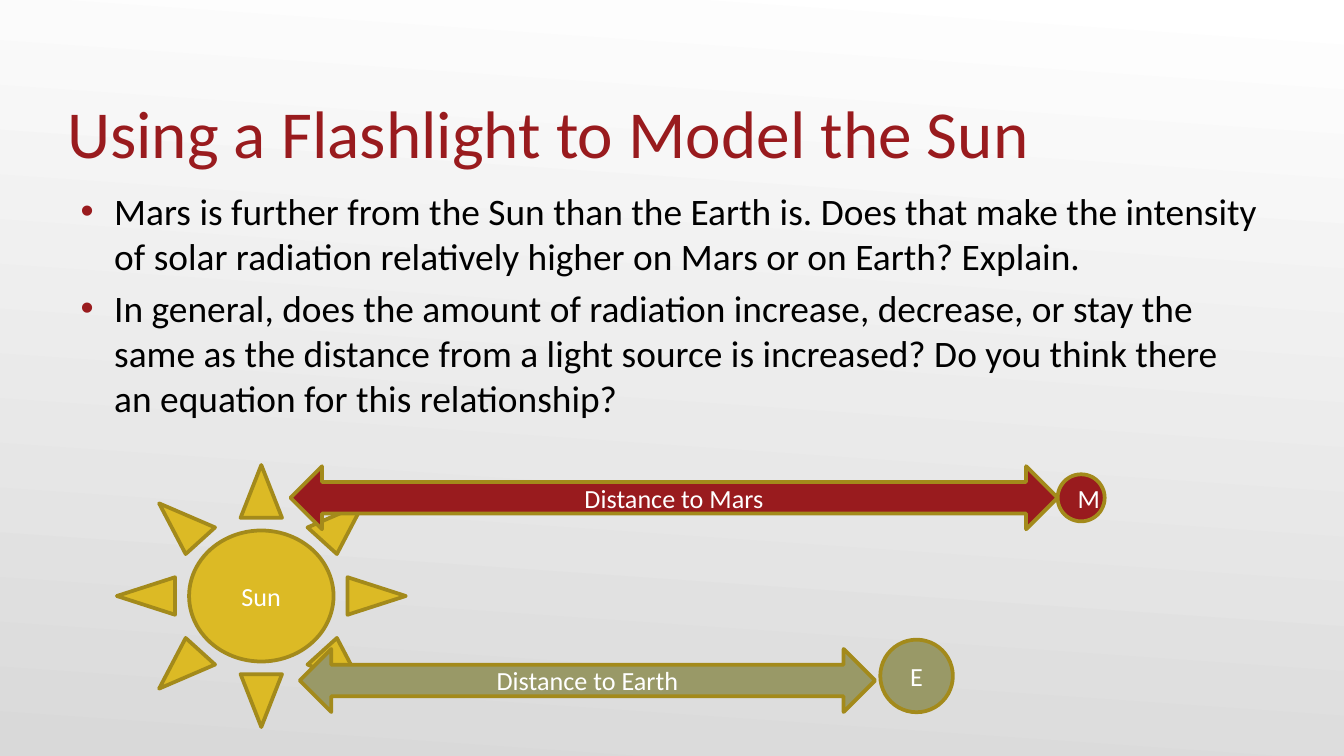
from dataclasses import dataclass

from lxml.etree import SubElement
from pptx import Presentation
from pptx.dml.color import RGBColor
from pptx.enum.shapes import MSO_SHAPE as Preset
from pptx.enum.text import MSO_ANCHOR as Anchor, MSO_AUTO_SIZE as AutoSize, PP_ALIGN as Align
from pptx.oxml.ns import qn
from pptx.util import Pt


@dataclass(frozen=True)
class Theme:
    font: str = "Calibri"
    red: str = "991B1E"
    gold: str = "DCBA25"
    olive: str = "999967"
    outline: str = "A38A1B"
    ink: str = "000000"
    white: str = "FFFFFF"
    grey: str = "D9D9D9"
    title_size: int = 36
    body_size: int = 20
    label_size: int = 14


THEME = Theme()
TITLE = "Using a Flashlight to Model the Sun"
QUESTIONS = [
    "Mars is further from the Sun than the Earth is. Does that make the intensity "
    "of solar radiation relatively higher on Mars or on Earth? Explain.",
    "In general, does the amount of radiation increase, decrease, or stay the same as "
    "the distance from a light source is increased? Do you think there an equation "
    "for this relationship?",
]


def rgb(color):
    return RGBColor.from_string(color)


def set_all(target, values):
    for name, value in values.items():
        setattr(target, name, value)


def set_box(shape, box):
    set_all(shape, dict(zip(("left", "top", "width", "height"), map(Pt, box))))


def set_font(paragraph, size, color):
    set_all(paragraph.font, {"name": THEME.font, "size": Pt(size)})
    paragraph.font.color.rgb = rgb(color)


def paint_background(slide):
    fill = slide.background.fill
    fill.gradient()
    fill.gradient_angle = 266  # counter-clockwise
    for stop, position, color in zip(fill.gradient_stops, (0, 1), (THEME.white, THEME.grey)):
        stop.position = position
        stop.color.rgb = rgb(color)


def place_title(title, box):
    set_box(title, box)
    frame = title.text_frame
    frame.text = TITLE
    set_all(frame, {
        "vertical_anchor": Anchor.BOTTOM, "auto_size": AutoSize.NONE, "word_wrap": True,
        "margin_left": 0, "margin_top": Pt(3.6), "margin_right": 0, "margin_bottom": 0,
    })
    heading = frame.paragraphs[0]
    heading.alignment = Align.LEFT
    set_font(heading, THEME.title_size, THEME.red)


def add_bullet(paragraph, indent):
    properties = paragraph._p.get_or_add_pPr()
    properties.set("marL", str(Pt(indent)))
    properties.set("indent", str(-Pt(indent)))
    color = SubElement(properties, qn("a:buClr"))
    SubElement(color, qn("a:srgbClr"), val=THEME.red)
    SubElement(properties, qn("a:buFont"), typeface="Arial")
    SubElement(properties, qn("a:buChar"), char="•")


def place_questions(body, box):
    set_box(body, box)
    frame = body.text_frame
    frame.text = "\n".join(QUESTIONS)
    set_all(frame, {"auto_size": AutoSize.NONE, "word_wrap": True, "vertical_anchor": Anchor.TOP})
    for index, question in enumerate(frame.paragraphs):
        question.space_before = Pt(4 if index else 0)
        add_bullet(question, 18)
        set_font(question, THEME.body_size, THEME.ink)


def add_labelled(slide, preset, box, color, label):
    shape = slide.shapes.add_shape(preset, *map(Pt, box))
    shape.shadow.inherit = False
    shape.fill.solid()
    shape.fill.fore_color.rgb = rgb(color)
    shape.line.color.rgb = rgb(THEME.outline)
    shape.line.width = Pt(2)
    frame = shape.text_frame
    frame.text = label
    set_all(frame, {"word_wrap": True, "vertical_anchor": Anchor.MIDDLE})
    frame.paragraphs[0].alignment = Align.CENTER
    set_font(frame.paragraphs[0], THEME.label_size, THEME.white)


def draw_distances(slide, box):
    """Draw the Sun at the left of the box, then the planets, then the arrows to them."""
    left, top, _, height = box
    planets = [  # name, colour, planet x, y, diameter, arrow x, y, length
        ("Earth", THEME.olive, 409, 93.6, 38.9, 98, 98.6, 308.2),
        ("Mars", THEME.red, 504, 5, 25.2, 93, 0.7, 411),
    ]
    add_labelled(slide, Preset.SUN, (left, top, 154.8, height), THEME.gold, "Sun")
    for name, color, x, y, diameter, *_ in planets:
        planet_box = (left + x, top + y, diameter, diameter)
        add_labelled(slide, Preset.OVAL, planet_box, color, name[0])
    for name, color, *_, x, y, length in reversed(planets):
        arrow_box = (left + x, top + y, length, 33.8)
        add_labelled(slide, Preset.LEFT_RIGHT_ARROW, arrow_box, color, f"Distance to {name}")


def main():
    deck = Presentation()
    set_all(deck, {"slide_width": Pt(720), "slide_height": Pt(405)})
    slide = deck.slides.add_slide(deck.slide_layouts[1])
    paint_background(slide)
    place_title(slide.shapes.title, (36, 24.5, 648, 67.7))
    place_questions(slide.placeholders[1], (36, 97.2, 648, 259.2))
    draw_distances(slide, (62.6, 249.1, 529.2, 140.4))
    deck.save("out.pptx")


if __name__ == "__main__":
    main()
